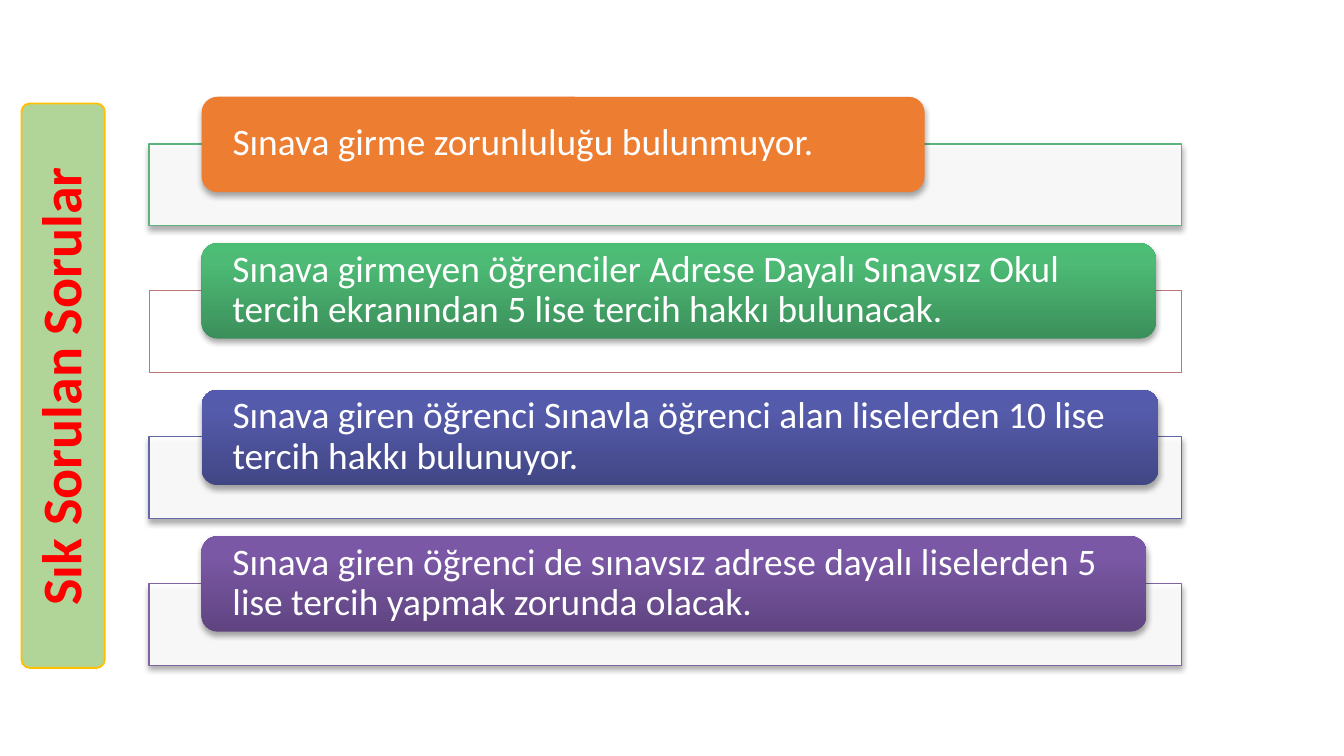
from lxml import etree
from pptx import Presentation
from pptx.dml.color import RGBColor
from pptx.enum.shapes import MSO_SHAPE
from pptx.enum.text import MSO_ANCHOR, PP_ALIGN
from pptx.oxml import parse_xml
from pptx.oxml.ns import nsdecls, qn
from pptx.util import Inches, Pt

RECT = MSO_SHAPE.RECTANGLE
ROUNDED = MSO_SHAPE.ROUNDED_RECTANGLE
MIDDLE = MSO_ANCHOR.MIDDLE
CENTER = PP_ALIGN.CENTER
rgb = RGBColor.from_string

SHADOW = (
    f'<a:outerShdw {nsdecls("a")} blurRad="39370" dist="22860" dir="5400000" rotWithShape="0">'
    '<a:srgbClr val="000000"><a:alpha val="35000"/></a:srgbClr></a:outerShdw>'
)

# Answer, bar width, bar colours from bottom to top, frame line colour and width
ANSWERS = [
    ("Sınava girme zorunluluğu bulunmuyor.",
     5.38, ["ED7D31"], "5CB37C", 0.75),
    ("Sınava girmeyen öğrenciler Adrese Dayalı Sınavsız Okul tercih ekranından "
     "5 lise tercih hakkı bulunacak.",
     7.1, ["3B8F5A", "4DBA75", "4BBD75"], "BB7676", 0.5),
    ("Sınava giren öğrenci Sınavla öğrenci alan liselerden 10 lise tercih hakkı bulunuyor.",
     7.12, ["414684", "555BAB", "545AAE"], "6267A6", 0.75),
    ("Sınava giren öğrenci de sınavsız adrese dayalı liselerden 5 lise tercih yapmak "
     "zorunda olacak.",
     7.03, ["5F4480", "7B58A6", "7C57A8"], "8064A2", 0.75),
]
ROW_TOP, ROW_PITCH = 0.72, 1.09


def add_panel(kind, left, top, width, height, colors, line=None, line_width=0.75,
              opacity=100, shadow=True):
    panel = slide.shapes.add_shape(kind, Inches(left), Inches(top), Inches(width), Inches(height))
    panel.shadow.inherit = False
    if shadow:
        panel._element.spPr.find(qn("a:effectLst")).append(parse_xml(SHADOW))
    if line:
        panel.line.color.rgb = rgb(line)
        panel.line.width = Pt(line_width)
    else:
        panel.line.fill.background()
    if len(colors) == 1:
        panel.fill.solid()
        panel.fill.fore_color.rgb = rgb(colors[0])
        if opacity < 100:
            color = panel._element.spPr.find(qn("a:solidFill"))[0]
            etree.SubElement(color, qn("a:alpha"), val=str(opacity * 1000))
    else:
        panel.fill.gradient()
        gradient = panel._element.spPr.find(qn("a:gradFill"))
        stops = gradient.find(qn("a:gsLst"))
        for stop in list(stops):
            stops.remove(stop)
        for position, value in zip((0, 80, 100), colors):
            stop = etree.SubElement(stops, qn("a:gs"), pos=str(position * 1000))
            etree.SubElement(stop, qn("a:srgbClr"), val=value)
        gradient.find(qn("a:lin")).set("ang", "16200000")
    return panel


def add_text(text, left, top, width, height, size, color, inset_x, inset_y):
    box = slide.shapes.add_textbox(Inches(left), Inches(top), Inches(width), Inches(height))
    frame = box.text_frame
    frame.word_wrap = True
    frame.vertical_anchor = MIDDLE
    frame.margin_left = frame.margin_right = Inches(inset_x)
    frame.margin_top = frame.margin_bottom = Inches(inset_y)
    paragraph = frame.paragraphs[0]
    paragraph.text = text
    paragraph.line_spacing = 0.9
    paragraph.font.name = "Calibri"
    paragraph.font.size = Pt(size)
    paragraph.font.color.rgb = rgb(color)
    return frame


# A 16:9 slide
prs = Presentation()
prs.slide_width = Inches(10)
prs.slide_height = Inches(10 * 9 / 16)
slide = prs.slides.add_slide(prs.slide_layouts[6])

# Answers: a wide frame with a coloured bar over its top edge
for row, (answer, width, colors, line, line_width) in enumerate(ANSWERS):
    top = ROW_TOP + row * ROW_PITCH
    add_panel(RECT, 1.11, top + 0.35, 7.68, 0.61, ["FFFFFF"], line, line_width,
              opacity=90, shadow=line_width > 0.5)
    add_panel(ROUNDED, 1.5, top, width, 0.71, colors)
    add_text(answer, 1.53, top + 0.03, width - 0.07, 0.64, 20, "FFFFFF", 0.2, 0)

# Vertical title on the left
title_panel = add_panel(ROUNDED, 0.16, 0.77, 0.62, 4.2, ["A9D18E"], "FFC000", 1,
                        opacity=90, shadow=False)
title_panel.adjustments[0] = 0.1
title = add_text("Sık Sorulan Sorular", 0.17, 0.9, 0.6, 3.95, 30, "FF0000", 0.15, 0.15)
title._txBody.bodyPr.set("vert", "vert270")
title.paragraphs[0].alignment = CENTER
title.paragraphs[0].font.bold = True

prs.save("out.pptx")
